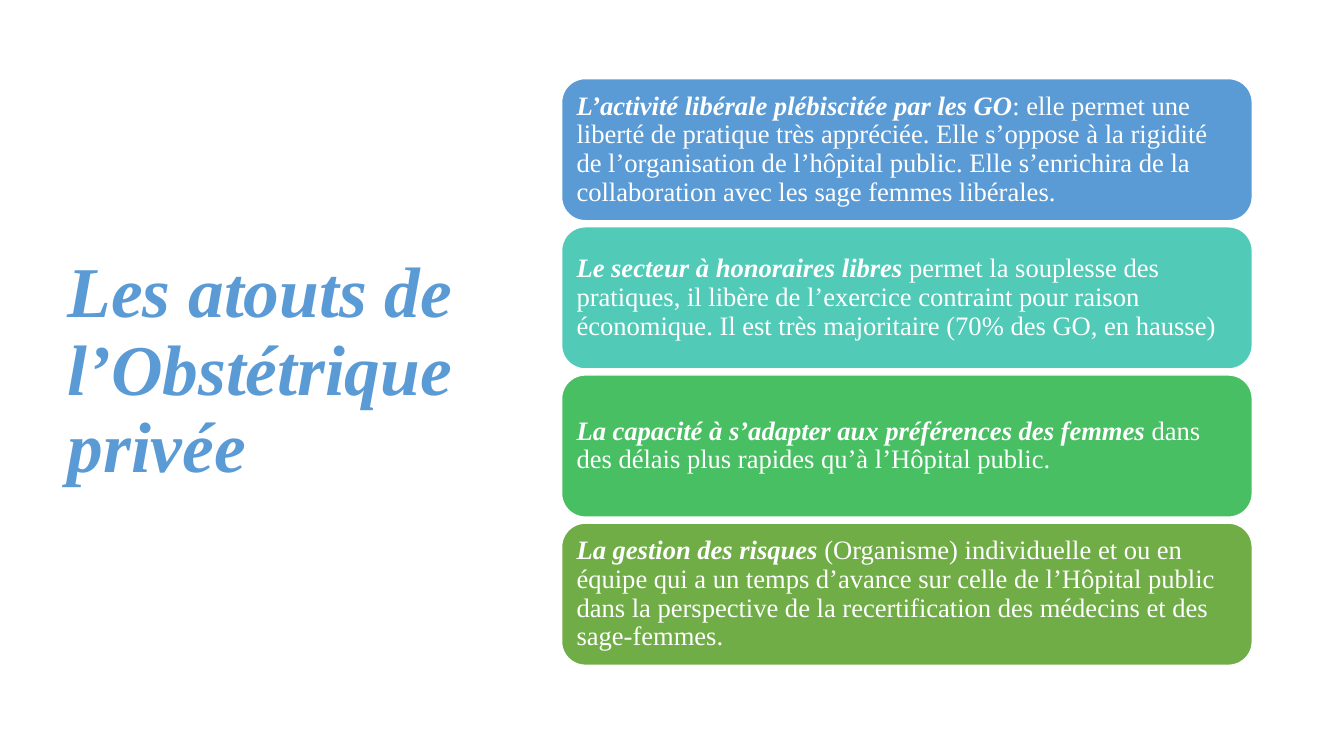
import dataclasses
import pptx
import pptx.util
import pptx.dml.color
import pptx.enum.shapes
import pptx.enum.text

Inches = pptx.util.Inches


@dataclasses.dataclass
class Theme:
    font: str = "Times New Roman"
    blue: str = "5B9BD5"
    teal: str = "52CAB8"
    green: str = "49BF64"
    olive: str = "70AD47"
    white: str = "FFFFFF"
    head: int = 51
    body: int = 19
    lines: float = 0.9


class Deck:
    def __init__(self, theme):
        self.theme = theme
        self.file = pptx.Presentation()
        self.file.slide_width = Inches(13.33)
        self.file.slide_height = Inches(7.5)
        self.slide = None

    def page(self):
        self.slide = self.file.slides.add_slide(self.file.slide_layouts[5])

    def color(self, code):
        return pptx.dml.color.RGBColor.from_string(code)

    def style(self, run, size, code, strong):
        run.font.name = self.theme.font
        run.font.size = pptx.util.Pt(size)
        run.font.bold = strong
        run.font.italic = strong
        run.font.color.rgb = self.color(code)

    def set_frame(self, frame):
        frame.word_wrap = True
        frame.auto_size = pptx.enum.text.MSO_AUTO_SIZE.NONE
        frame.vertical_anchor = pptx.enum.text.MSO_ANCHOR.MIDDLE
        para = frame.paragraphs[0]
        para.alignment = pptx.enum.text.PP_ALIGN.LEFT
        para.line_spacing = self.theme.lines
        return para

    def title(self, text, left, top, width, height):
        shape = self.slide.shapes.title
        shape.left, shape.top = Inches(left), Inches(top)
        shape.width, shape.height = Inches(width), Inches(height)
        shape.text_frame.text = text
        para = self.set_frame(shape.text_frame)
        self.style(para.runs[0], self.theme.head, self.theme.blue, True)

    def card(self, lead, rest, fill, left, top, width, height):
        shape = self.slide.shapes.add_shape(
            pptx.enum.shapes.MSO_SHAPE.ROUNDED_RECTANGLE,
            Inches(left), Inches(top), Inches(width), Inches(height))
        shape.shadow.inherit = False
        shape.fill.solid()
        shape.fill.fore_color.rgb = self.color(fill)
        shape.line.color.rgb = self.color(self.theme.white)
        shape.line.width = pptx.util.Pt(1)
        frame = shape.text_frame
        frame.margin_left = frame.margin_right = Inches(0.08)
        frame.margin_top = frame.margin_bottom = Inches(0.08)
        para = self.set_frame(frame)
        for text, strong in ((lead, True), (rest, False)):
            run = para.add_run()
            run.text = text
            self.style(run, self.theme.body, self.theme.white, strong)


def main():
    theme = Theme()
    deck = Deck(theme)
    deck.page()
    deck.title("Les atouts de l’Obstétrique privée", 0.57, 0.68, 4.61, 6.02)
    cards = [
        ("L’activité libérale plébiscitée par les GO",
         ": elle permet une liberté de pratique très appréciée. Elle s’oppose "
         "à la rigidité de l’organisation de l’hôpital public. Elle "
         "s’enrichira de la collaboration avec les sage femmes libérales.",
         theme.blue),
        ("Le secteur à honoraires libres ",
         "permet la souplesse des pratiques, il libère de l’exercice contraint "
         "pour raison économique. Il est très majoritaire (70% des GO, en "
         "hausse)",
         theme.teal),
        ("La capacité à s’adapter aux préférences des femmes",
         " dans des délais plus rapides qu’à l’Hôpital public.",
         theme.green),
        ("La gestion des risques ",
         "(Organisme) individuelle et ou en équipe qui a un temps d’avance sur "
         "celle de l’Hôpital public dans la perspective de la recertification "
         "des médecins et des sage-femmes.",
         theme.olive),
    ]
    for row, (lead, rest, fill) in enumerate(cards):
        deck.card(lead, rest, fill, 5.57, 0.78 + row * 1.47, 6.85, 1.41)
    deck.file.save("out.pptx")


if __name__ == "__main__":
    main()
